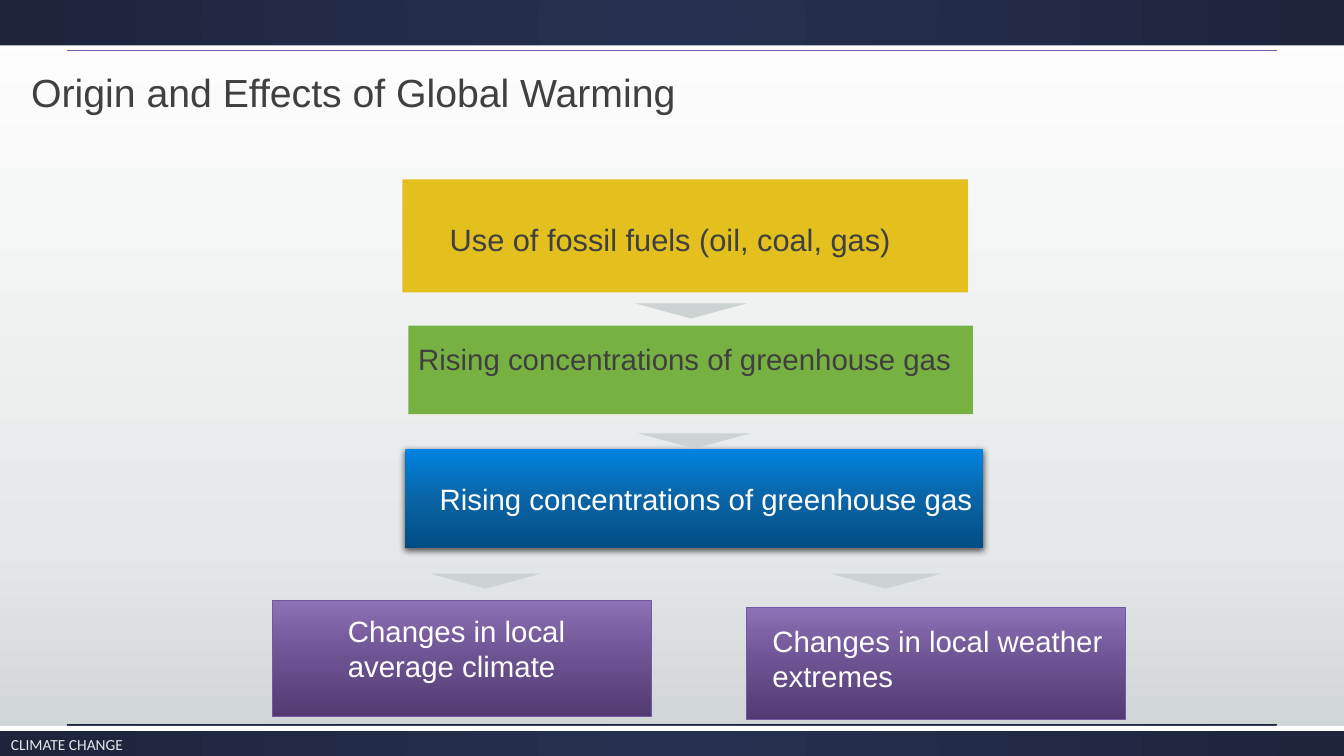
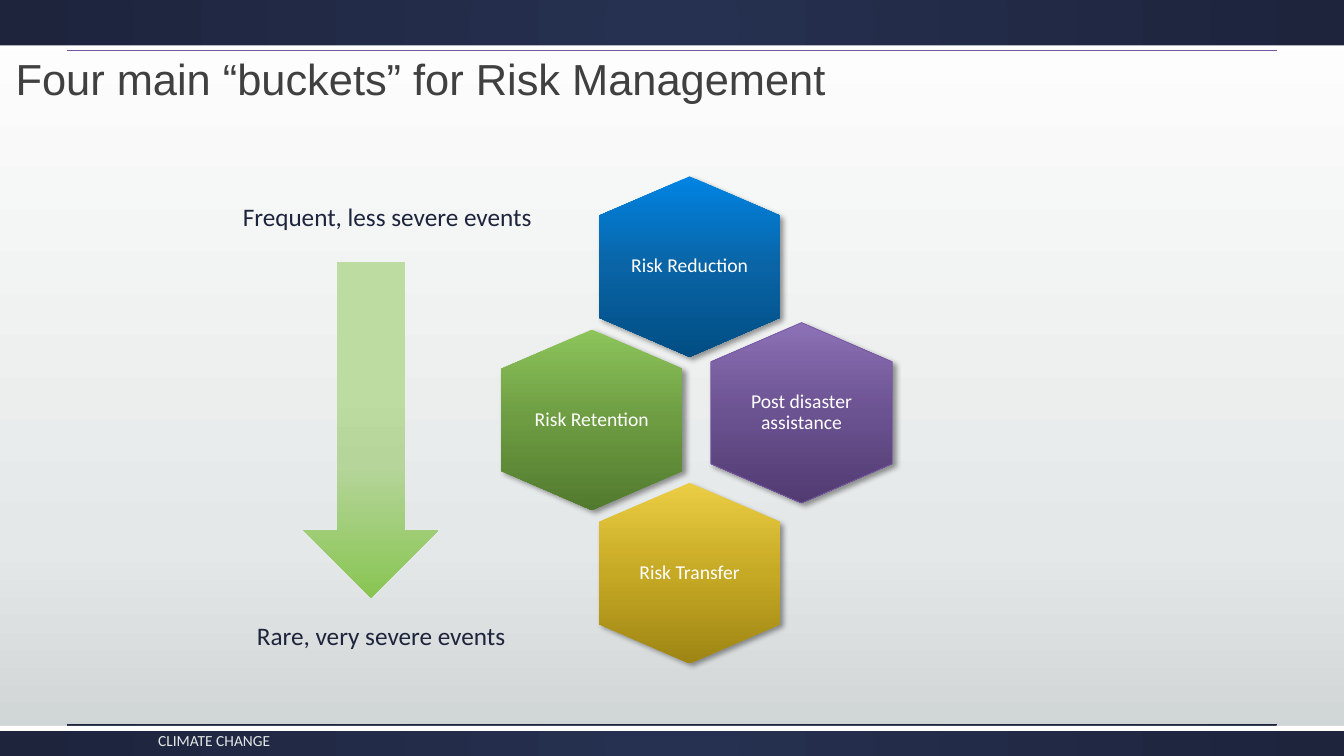
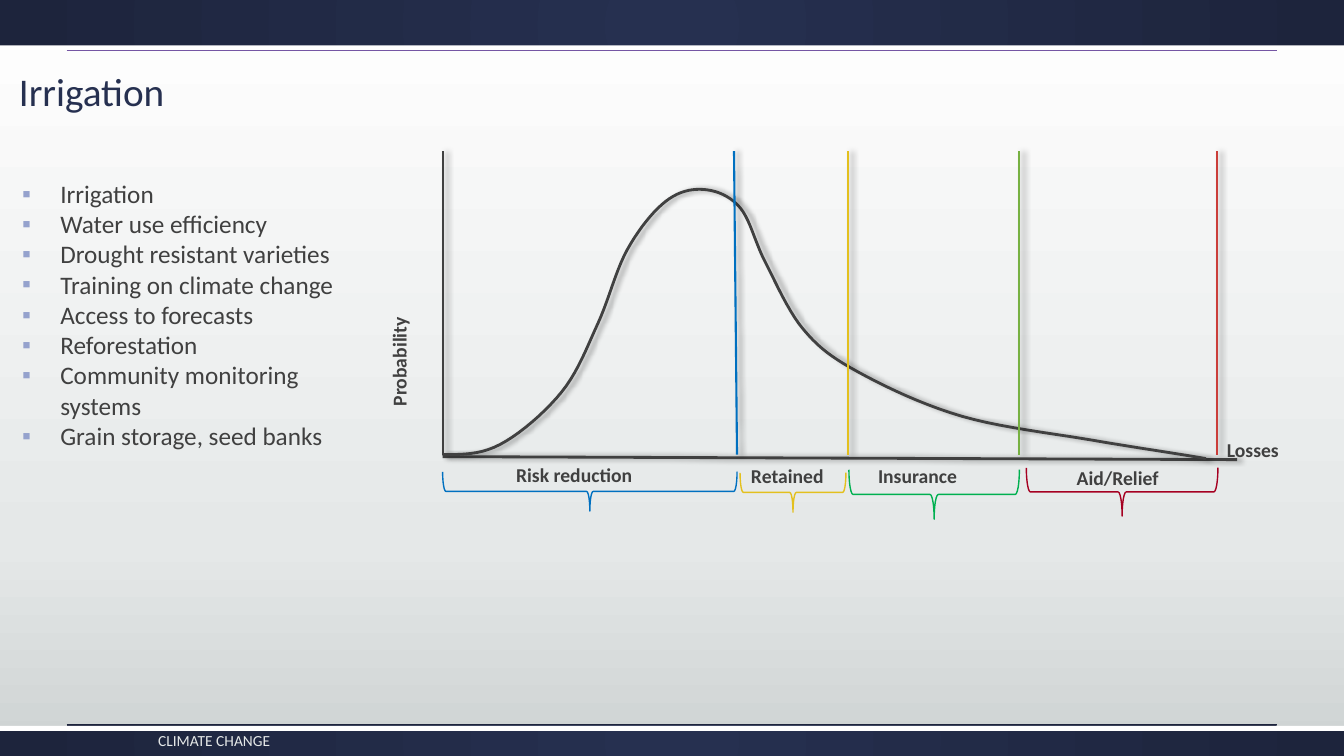
import lxml.etree
import pptx
import pptx.dml.color
import pptx.enum.shapes
import pptx.enum.text
import pptx.oxml.ns
import pptx.util

SHAPE = pptx.enum.shapes.MSO_SHAPE
ALIGN = pptx.enum.text.PP_ALIGN
ANCHOR = pptx.enum.text.MSO_ANCHOR
Pt = pptx.util.Pt
qn = pptx.oxml.ns.qn

# Grid: 75 rows of square cells; every box is (column, row, columns, rows)
WIDE, HIGH = pptx.util.Inches(13.33), pptx.util.Inches(7.5)
CELL = HIGH / 75
COLS = WIDE / CELL
PAGE = (0, 0, COLS, 75)

# Shared colours
GREY, WHITE, NAVY, MIST = "404040", "FFFFFF", "1D243C", "CDD2D2"
GOLD, GREEN, PURPLE = "E3C01E", "77B142", "7556A4"
BACK = [(0, WHITE), (72, "E5E8E8"), (100, MIST)]
BAND = [(0, "263050"), (100, NAVY)]
BLUES = [(0, "0084E3"), (50, "0A64A5"), (100, "004D84")]
LEAVES = [(0, "8DC45B"), (50, "6D9C42"), (100, "527A2E")]
GOLDS = [(0, "EBCD45"), (50, "C6A924"), (100, "9E8514")]
PLUMS = [(0, "8C71B6"), (50, "6B5291"), (100, "513B71")]
ARROW = [(0, "BDDCA1"), (38, "BDDCA1"), (60, "B6D59B"), (100, "89C552")]

# Shared text styles
TITLE = dict(name="Arial", size=Pt(28))
FLOW = dict(name="Arial", size=Pt(21))
BODY = dict(name="Calibri", size=Pt(18))
LABEL = dict(name="Calibri", size=Pt(14))
BOLD = dict(LABEL, bold=True)
FOOT = dict(name="Calibri", size=Pt(11))

# Shadows: opacity %, blur, distance, angle
DROP = (63, 4.5, 1.5, 90)
SLANT = (40, 4, 3, 45)
SIDE = (40, 4, 3, 0)


def ink(code):
    return pptx.dml.color.RGBColor.from_string(code)


def emu(cells):
    return round(cells * CELL)


def put(box, x, y, w=0, h=0):
    """Box at an offset inside another box."""
    return box[0] + x, box[1] + y, w, h


def sub(node, tag, **attrs):
    kid = lxml.etree.SubElement(node, qn(tag))
    for key, val in attrs.items():
        kid.set(key, str(val))
    return kid


def paint(fill, look, round_=False):
    """Solid for a hex string, gradient for a list of stops."""
    fill.solid()
    if isinstance(look, str):
        fill.fore_color.rgb = ink(look)
        return
    old = fill._xPr.find(qn("a:solidFill"))
    grad = lxml.etree.Element(qn("a:gradFill"), rotWithShape="1")
    stops = sub(grad, "a:gsLst")
    for pos, code in look:
        sub(sub(stops, "a:gs", pos=pos * 1000), "a:srgbClr", val=code)
    if round_:
        half = dict.fromkeys("ltrb", 50000)
        sub(sub(grad, "a:path", path="circle"), "a:fillToRect", **half)
    else:
        sub(grad, "a:lin", ang=5400000, scaled=0)
    old.getparent().replace(old, grad)


def shade(shape, spec_=None):
    """Clear the theme shadow, then add one if given."""
    props = shape._element.spPr
    for old in props.findall(qn("a:effectLst")):
        props.remove(old)
    fx = sub(props, "a:effectLst")
    if spec_:
        clear, blur, dist, ang = spec_
        cast = sub(fx, "a:outerShdw", blurRad=Pt(blur), dist=Pt(dist),
                   dir=ang * 60000, algn="ctr", rotWithShape=0)
        sub(sub(cast, "a:srgbClr", val="000000"), "a:alpha", val=clear * 1000)


def dress(shape, look=None, line=None, thick=0.5, cast=None, round_=False):
    if look:
        paint(shape.fill, look, round_)
    else:
        shape.fill.background()
    if line:
        shape.line.color.rgb = ink(line)
        shape.line.width = Pt(thick)
    else:
        shape.line.fill.background()
    shade(shape, cast)
    return shape


def block(slide, kind, box, look=None, **more):
    shape = slide.shapes.add_shape(kind, *map(emu, box))
    return dress(shape, look, **more)


def rule(slide, start, end, code, thick, cast=None):
    ends = map(emu, (*start[:2], *end[:2]))
    line = slide.shapes.add_connector(
        pptx.enum.shapes.MSO_CONNECTOR.STRAIGHT, *ends)
    line.line.color.rgb = ink(code)
    line.line.width = Pt(thick)
    shade(line, cast)


def trace(slide, dots, close):
    dots = [(emu(x), emu(y)) for x, y in dots]
    path = slide.shapes.build_freeform(*dots[0])
    path.add_line_segments(dots[1:], close=close)
    return path.convert_to_shape()


def write(shape, lines, font, code=GREY, pad=(1, 0.5, 1, 0.5),
          anchor=ANCHOR.TOP, **form):
    """Fill a shape with paragraphs; pad is left, top, right, bottom."""
    frame = shape.text_frame
    sides = ("margin_left", "margin_top", "margin_right", "margin_bottom")
    setup = dict(zip(sides, map(emu, pad)), word_wrap=True,
                 vertical_anchor=anchor)
    for key, val in setup.items():
        setattr(frame, key, val)
    for num, line in enumerate(lines):
        para = frame.add_paragraph() if num else frame.paragraphs[0]
        for key, val in dict(dict(alignment=ALIGN.LEFT), **form).items():
            setattr(para, key, val)
        run = para.add_run()
        run.text = line
        for key, val in font.items():
            setattr(run.font, key, val)
        run.font.color.rgb = ink(code)
    return frame


def text(slide, box, lines, font, code=GREY, **more):
    shape = slide.shapes.add_textbox(*map(emu, box))
    return write(shape, lines, font, code, **more)


def base(deck, foot):
    """Blank slide with backdrop, bands, thin rules and footer."""
    slide = deck.slides.add_slide(deck.slide_layouts[6])
    paint(slide.background.fill, BACK)
    for top, high, edge in ((72, 3, 72), (0, 5, 4.5)):
        block(slide, SHAPE.RECTANGLE, (0, top, COLS, high), BAND, round_=True)
        block(slide, SHAPE.RECTANGLE, (0, edge, COLS, 0.5), WHITE)
    for row, code in ((5, PURPLE), (71.9, NAVY)):
        rule(slide, (6.6, row), (COLS - 6.6, row), code, 0.5)
    text(slide, put(PAGE, *foot, 78.3, 2.6), ["CLIMATE CHANGE"], FOOT,
         "E5E8E8", anchor=ANCHOR.MIDDLE)
    return slide


def flow(slide, box):
    """Cause and effect boxes joined by arrowheads."""
    gas = "Rising concentrations of greenhouse gas"
    big = dict(FLOW, size=Pt(22))
    plum = dict(line=PURPLE)
    steps = [
        (12.9, 0, 56.1, 11.2, GOLD, {}, "Use of fossil fuels (oil, coal, gas)",
         big, GREY, 4.7, 4.1),
        (13.5, 14.5, 56, 8.8, GREEN, {}, gas, FLOW, GREY, 1, 1.5),
        (13.2, 26.7, 57.3, 9.9, BLUES, dict(cast=DROP), gas, FLOW, WHITE,
         3.4, 3.2),
        (47, 42.5, 37.6, 11.1, PLUMS, plum,
         "Changes in local weather extremes", FLOW, WHITE, 2.6, 1.5),
        (0, 41.8, 37.6, 11.5, PLUMS, plum,
         "Changes in local average climate", FLOW, WHITE, 7.5, 1.2),
    ]
    for x, y, w, h, look, more, line, font, code, left, top in steps:
        step = block(slide, SHAPE.RECTANGLE, put(box, x, y, w, h), look, **more)
        write(step, [line], font, code, pad=(left, top, 0, 0))
    for x, y in ((36, 12.3), (36.3, 25.2), (15.6, 39.1), (55.3, 39.1)):
        head = block(slide, SHAPE.ISOSCELES_TRIANGLE,
                     put(box, x, y, 11.1, 1.5), MIST)
        head.rotation = 180


def scale(slide, box):
    """Arrow from frequent to rare events."""
    block(slide, SHAPE.DOWN_ARROW, put(box, 7, 6.5, 13.4, 33.3), ARROW)
    for x, y, line in ((0, 0, "Frequent, less severe events"),
                       (1.4, 41.6, "Rare, very severe events")):
        text(slide, put(box, x, y, 36, 4), [line], BODY, NAVY)


def hive(slide, box):
    """Four hexagons."""
    wide, high, cut = 18, 17.9, 3.9
    outline = [(wide / 2, 0), (wide, cut), (wide, high - cut),
               (wide / 2, high), (0, high - cut), (0, cut)]
    cells = [(9.7, 0, BLUES, None, "Risk Reduction"),
             (0, 15.2, LEAVES, None, "Risk Retention"),
             (9.7, 30.4, GOLDS, None, "Risk Transfer"),
             (20.8, 14.5, PLUMS, PURPLE, "Post disaster assistance")]
    for x, y, look, line, name in cells:
        dots = [put(box, x + dx, y + dy)[:2] for dx, dy in outline]
        cell = dress(trace(slide, dots, True), look, line=line, cast=SLANT)
        write(cell, [name], LABEL, WHITE, pad=(2.8, 3.2, 2.8, 3.2),
              anchor=ANCHOR.MIDDLE, alignment=ALIGN.CENTER, line_spacing=0.9)


def smooth(knots, steps=10):
    """Catmull-Rom curve; the first and last knots only steer it."""
    dots = [knots[1]]
    for a, b, c, d in zip(knots, knots[1:], knots[2:], knots[3:]):
        for num in range(1, steps + 1):
            t = num / steps
            dots.append(tuple(
                (2 * q + (r - p) * t + (2 * p - 5 * q + 4 * r - s) * t ** 2
                 + (3 * q - p - 3 * r + s) * t ** 3) / 2
                for p, q, r, s in zip(a, b, c, d)))
    return dots


def curve(slide, box):
    """Loss probability curve, split into four zones."""
    knots = [(-5.7, 29.1), (0, 30.1), (5.7, 29.1), (11.8, 23.9), (15.4, 17.1),
             (18.3, 9.8), (22.1, 5), (25.9, 3.8), (29.5, 5.6), (32, 11),
             (35.8, 17.7), (41.2, 21.9), (51.5, 26.3), (64.6, 28.7),
             (75.7, 30.5), (77.8, 31.1)]
    # Axes and curve
    rule(slide, put(box, 0, 0), put(box, 0, box[3]), GREY, 1.5, SIDE)
    rule(slide, put(box, 0, 30.3), put(box, 78.8, 30.6), GREY, 2, SIDE)
    dots = [put(box, *dot)[:2] for dot in smooth(knots)]
    dress(trace(slide, dots, False), line=GREY, thick=2, cast=SIDE)
    # Zones: wall top and foot, wall colour, brace box and colour, label
    zones = [
        (28.9, 29.2, "0070C0", (0, 31.8, 29.2, 3.9), "0070C0",
         "Risk reduction", 6.3, 30.4),
        (40.2, 40.2, GOLD, (29.5, 31.9, 10.5, 3.9), GOLD,
         "Retained", 29.6, 30.5),
        (57.2, 57.2, GREEN, (40.3, 31.6, 16.9, 4.9), "00B050",
         "Insurance", 42.2, 30.5),
        (76.8, 76.8, "CB3E3A", (57.9, 31.4, 19, 4.8), "A50021",
         "Aid/Relief", 61.9, 30.7),
    ]
    for top, foot, wall, (x, y, w, h), code, name, left, row in zones:
        rule(slide, put(box, top, 0), put(box, foot, box[3]), wall, 1.5, SIDE)
        turned = put(box, x + (w - h) / 2, y + (h - w) / 2, h, w)
        brace = block(slide, SHAPE.LEFT_BRACE, turned, line=code, thick=1)
        brace.rotation = 270
        text(slide, put(box, left, row, 17.8, 3.4), [name], BOLD)
    # Axis names
    text(slide, put(box, 76.8, 28, 10.1, 3.4), ["Losses"], BOLD)
    side = text(slide, put(box, -6, 7.9, 4.4, 18.4), ["Probability"], BOLD)
    side._txBody.bodyPr.set("vert", "vert270")


def points(slide, box, lines):
    """Bulleted list."""
    frame = text(slide, box, lines, BODY)
    for para in frame.paragraphs:
        props = para._p.get_or_add_pPr()
        props.set("marL", str(emu(3.8)))
        props.set("indent", str(-emu(3.8)))
        sub(sub(props, "a:buClr"), "a:srgbClr", val="95A2CD")
        sub(props, "a:buFont", typeface="Arial")
        sub(props, "a:buChar", char="▪")


def main():
    deck = pptx.Presentation()
    deck.slide_width, deck.slide_height = WIDE, HIGH

    # Causes
    slide = base(deck, (0.1, 72.6))
    text(slide, put(PAGE, 2.2, 6.4, 76, 5.6),
         ["Origin and Effects of Global Warming"], TITLE,
         pad=(0.9, 0.4, 0.9, 0.4))
    flow(slide, put(PAGE, 27, 17.8, 84.6, 53.6))

    # Buckets
    slide = base(deck, (14.7, 72.2))
    text(slide, put(PAGE, 0, 4.6, 83.4, 7),
         ["Four main “buckets” for Risk Management"],
         dict(TITLE, size=Pt(31)), anchor=ANCHOR.MIDDLE,
         alignment=ALIGN.CENTER, line_spacing=0.9)
    scale(slide, put(PAGE, 23.1, 19.5, 36, 45.6))
    hive(slide, put(PAGE, 49.7, 17.5, 38.8, 48.3))

    # Irrigation
    slide = base(deck, (14.7, 72.2))
    text(slide, put(PAGE, 0.9, 6.7, 100, 7.4), ["Irrigation"],
         dict(TITLE, name="Calibri"), "263050", line_spacing=0.9)
    curve(slide, put(PAGE, 43.9, 15, 78.8, 30.1))
    points(slide, put(PAGE, 1.2, 17.2, 34.1, 28.3), [
        "Irrigation", "Water use efficiency", "Drought resistant varieties",
        "Training on climate change", "Access to forecasts", "Reforestation",
        "Community monitoring systems", "Grain storage, seed banks"])

    deck.save("out.pptx")


if __name__ == "__main__":
    main()
